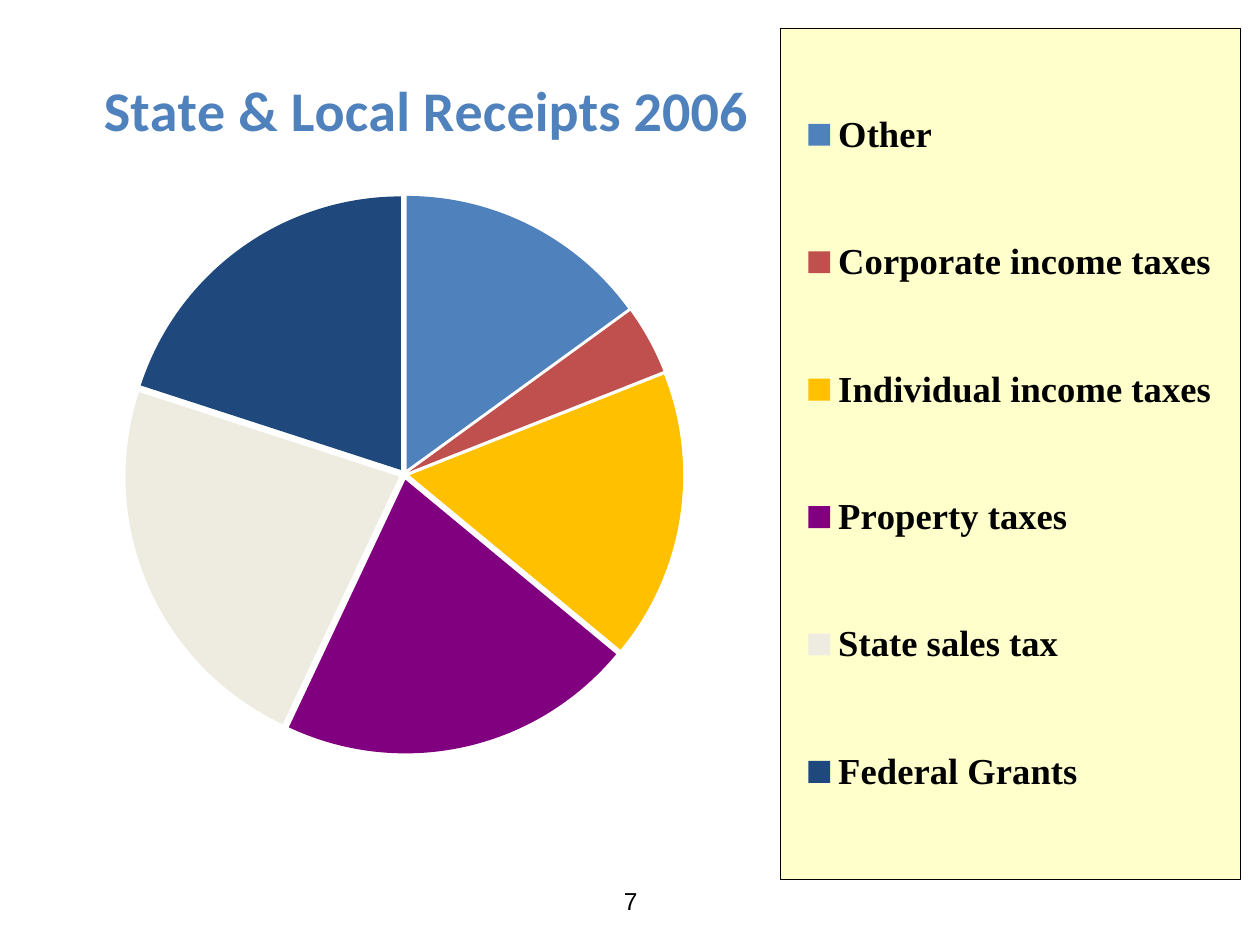
from dataclasses import dataclass

from lxml.etree import SubElement
from pptx import Presentation
from pptx.chart.data import CategoryChartData
from pptx.dml.color import RGBColor
from pptx.enum.chart import XL_CHART_TYPE, XL_LEGEND_POSITION
from pptx.enum.text import MSO_ANCHOR, PP_ALIGN
from pptx.oxml.ns import qn
from pptx.util import Inches, Pt


@dataclass(frozen=True)
class Theme:
    title: str = "4F81BD"
    text: str = "000000"
    legend_fill: str = "FFFFCC"
    title_size: float = 32
    chart_size: float = 18.4
    legend_size: float = 20.9
    number_size: float = 14


theme = Theme()


def set_font(font, name, size, color, bold=False):
    font.name = name
    font.size = Pt(size)
    font.bold = bold
    font.color.rgb = RGBColor.from_string(color)


def set_layout(element, index, inner=False, **fractions):
    """Place a chart part by fractions of the chart's width and height."""
    for old_layout in element.findall(qn("c:layout")):
        element.remove(old_layout)
    layout = SubElement(element, qn("c:layout"))
    element.insert(index, layout)
    manual = SubElement(layout, qn("c:manualLayout"))
    if inner:
        SubElement(manual, qn("c:layoutTarget")).set("val", "inner")
    for axis in "xy":
        SubElement(manual, qn(f"c:{axis}Mode")).set("val", "edge")
    for key, value in fractions.items():
        SubElement(manual, qn(f"c:{key}")).set("val", str(value))


presentation = Presentation()
presentation.slide_width = Inches(10)
presentation.slide_height = Inches(7.5)
slide = presentation.slides.add_slide(presentation.slide_layouts[6])

# Slide number
number_box = slide.shapes.add_textbox(Inches(3.42), Inches(6.95), Inches(3.17), Inches(0.4))
number_frame = number_box.text_frame
number_frame.word_wrap = True
number_frame.vertical_anchor = MSO_ANCHOR.MIDDLE
paragraph = number_frame.paragraphs[0]
paragraph.text = "7"
paragraph.alignment = PP_ALIGN.CENTER
set_font(paragraph.font, "Arial", theme.number_size, theme.text)

# Receipts by source: share in percent and slice colour
receipts = [
    ("Other", 15, "4F81BD"),
    ("Corporate income taxes", 4, "C0504D"),
    ("Individual income taxes", 17, "FFC000"),
    ("Property taxes", 21, "800080"),
    ("State sales tax", 23, "EEECE1"),
    ("Federal Grants", 20, "1F497D"),
]
chart_data = CategoryChartData()
chart_data.categories = [source for source, share, color in receipts]
chart_data.add_series("Series 1", [share for source, share, color in receipts])
chart = slide.shapes.add_chart(
    XL_CHART_TYPE.PIE, Inches(0.36), Inches(0.06), Inches(9.59), Inches(6.98), chart_data
).chart
set_font(chart.font, "Times New Roman", theme.chart_size, theme.text, bold=True)

# Slices, pulled slightly apart
plot = chart.plots[0]
plot.vary_by_categories = True
series = plot.series[0]
for index, (source, share, color) in enumerate(receipts):
    fill = series.points[index].format.fill
    fill.solid()
    fill.fore_color.rgb = RGBColor.from_string(color)
explosion = SubElement(series._element, qn("c:explosion"))
explosion.set("val", "2")
series._element.find(qn("c:dPt")).addprevious(explosion)
plot_area = chart._chartSpace.find(qn("c:chart")).find(qn("c:plotArea"))
set_layout(plot_area, 0, inner=True, x=0.066, y=0.196, w=0.462, h=0.67)

# Chart title
chart.has_title = True
title = chart.chart_title
title.text_frame.text = "State & Local Receipts 2006"
set_font(title.text_frame.paragraphs[0].font, "Calibri", theme.title_size, theme.title, bold=True)
set_layout(title._element, 1, x=0.04, y=0.06)

# Legend panel
chart.has_legend = True
legend = chart.legend
legend.position = XL_LEGEND_POSITION.RIGHT
legend.include_in_layout = False
set_font(legend.font, "Times New Roman", theme.legend_size, theme.text, bold=True)
set_layout(legend._element, 1, x=0.608, y=0.023, w=0.381, h=0.968)
panel = SubElement(legend._element, qn("c:spPr"))
legend._element.find(qn("c:txPr")).addprevious(panel)
panel_fill = SubElement(panel, qn("a:solidFill"))
SubElement(panel_fill, qn("a:srgbClr")).set("val", theme.legend_fill)
panel_line = SubElement(panel, qn("a:ln"))
panel_line.set("w", str(Pt(0.25)))
line_fill = SubElement(panel_line, qn("a:solidFill"))
SubElement(line_fill, qn("a:srgbClr")).set("val", theme.text)

presentation.save("out.pptx")
